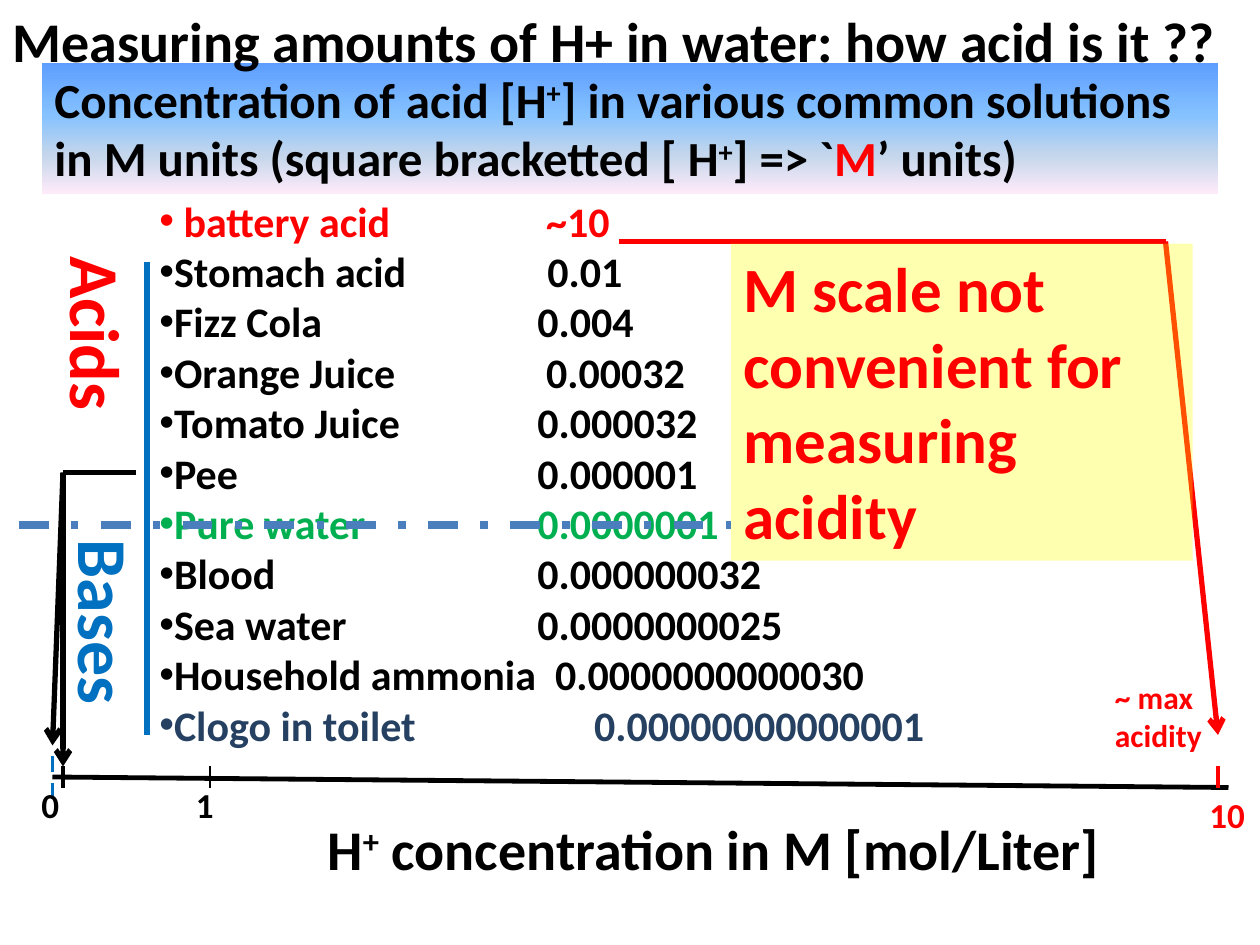
from lxml import etree
from pptx import Presentation
from pptx import util as u
from pptx.dml.color import RGBColor
from pptx.enum import dml, shapes, text
from pptx.oxml.ns import qn

COLS, ROWS = 120, 90
CELL = u.Inches(10) // COLS
C = {"black": "000000", "red": "FF0000", "blue": "0070C0", "green": "00B050",
     "navy": "254061", "steel": "4B7EBC", "yellow": "FFFF00"}
BAND = [(0, "5E9EFF"), (40, "85C2FF"), (70, "C4D6EB"), (100, "FFEBFA")]
SOLUTIONS = [
    (" battery acid", "~10", "red", 3.07),
    ("Stomach acid", "0.01", "black", 3.08),
    ("Fizz Cola", "0.004", "black", 3),
    ("Orange Juice", "0.00032", "black", 3.07),
    ("Tomato Juice", "0.000032", "black", 3),
    ("Pee", "0.000001", "black", 3),
    ("Pure water", "0.0000001", "green", 3),
    ("Blood", "0.000000032", "black", 3),
    ("Sea water", "0.0000000025", "black", 3),
    ("Household ammonia", "0.0000000000030", "black", 3.14),
    ("Clogo in toilet", "0.00000000000001", "navy", 3.45),
]


def rgb(name):
    return RGBColor.from_string(C[name])


def place(box, x, y):
    return int((box[0] + x) * CELL), int((box[1] + y) * CELL)


def sub(parent, tag, **attrs):
    return etree.SubElement(parent, qn(tag), attrs)


def line(s, box, start, end, color, width, dash=None, arrow=False):
    cx = s.shapes.add_connector(shapes.MSO_CONNECTOR.STRAIGHT,
                                *place(box, *start), *place(box, *end))
    cx.line.color.rgb = rgb(color)
    cx.line.width = u.Pt(width)
    if dash:
        cx.line.dash_style = dash
    if arrow:
        sub(cx.line._get_or_add_ln(), "a:tailEnd", type="arrow")
    sub(cx._element.spPr, "a:effectLst")


def style(p, size, color):
    p.font.name, p.font.size, p.font.bold = "Calibri", u.Pt(size), True
    p.font.color.rgb = rgb(color)


def add_tab(p, inches):
    tabs = sub(p._p.get_or_add_pPr(), "a:tabLst")
    sub(tabs, "a:tab", pos=str(u.Inches(inches)), algn="l")


def prepare(tf):
    tf.word_wrap = True
    tf.vertical_anchor = text.MSO_ANCHOR.TOP
    return tf


def write(tf, runs, size, color):
    p = prepare(tf).paragraphs[0]
    p.alignment = text.PP_ALIGN.LEFT
    style(p, size, color)
    for words in runs:
        r = p.add_run()
        r.text = words
        if words == "+":
            r.font._element.set("baseline", "30000")
        if words == "M":
            r.font.color.rgb = rgb("red")
    return p


def text_box(s, box, x, y, w, h):
    return s.shapes.add_textbox(*place(box, x, y), int(w * CELL), int(h * CELL)).text_frame


def panel(s, box, x, y, w, h):
    sp = s.shapes.add_shape(shapes.MSO_SHAPE.RECTANGLE, *place(box, x, y),
                            int(w * CELL), int(h * CELL))
    sp.shadow.inherit = False
    sp.line.fill.background()
    return sp


def header(s, box):
    sp = panel(s, box, 4, 6, 112, 12.5)
    sp.fill.gradient()
    grad = sp._element.spPr.find(qn("a:gradFill"))
    for child in list(grad):
        grad.remove(child)
    stops = sub(grad, "a:gsLst")
    for pos, color in BAND:
        sub(sub(stops, "a:gs", pos=str(pos * 1000)), "a:srgbClr", val=color)
    sub(grad, "a:lin", ang="5400000", scaled="0")
    write(sp.text_frame, ["Concentration of acid [H", "+",
                          "] in various common solutions in M units (square bracketted [ H",
                          "+", "] => `", "M", "’ units)"], 28, "black")
    write(text_box(s, box, 0, 0, 117, 7.7),
          ["Measuring amounts of H+ in water: how acid is it ??"], 32, "black")


def solution_list(s, box):
    tf = prepare(text_box(s, box, 14, 0, 106, 54.5))
    for i, (name, value, color, tab) in enumerate(SOLUTIONS):
        p = tf.paragraphs[0] if i == 0 else tf.add_paragraph()
        p.text = f"{name}\t{value}"
        style(p, 24, color)
        pPr = p._p.get_or_add_pPr()
        sub(pPr, "a:buFont", typeface="Arial")
        sub(pPr, "a:buChar", char="•")
        add_tab(p, tab)
    line(s, box, (14, 7), (14, 52), "blue", 3)


def axis(s, box):
    line(s, box, (5, 2), (117, 3), "black", 2.75)
    for x, color, width in [(6, "black", 2.5), (20, "black", 1.25), (116, "red", 2.5)]:
        line(s, box, (x, 1), (x, 3), color, width)
    line(s, box, (5, 0), (5, 5), "blue", 2.25, dml.MSO_LINE.DASH)
    add_tab(write(text_box(s, box, 2, 2, 28, 5.3), [" 0\t1"], 20, "black"), 1.29)
    write(text_box(s, box, 114, 3, 6, 5.3), ["10"], 20, "red")
    write(text_box(s, box, 105, -8, 14, 8.5), ["~ max acidity"], 18, "red")
    write(text_box(s, box, 30, 5, 82, 7.7),
          ["H", "+", " concentration in M [mol/Liter]"], 32, "black")


def pointers(s, box):
    line(s, box, (13, 22), (6, 22), "black", 2.5)
    line(s, box, (6, 22), (5, 48), "black", 3, arrow=True)
    line(s, box, (6, 22), (6, 50), "black", 3, arrow=True)
    line(s, box, (59, 0), (111, 0), "red", 2.75)
    line(s, box, (111, 0), (116, 47), "red", 3, arrow=True)


def callout(s, box):
    sp = panel(s, box, 0, 0, box[2], box[3])
    sp.fill.solid()
    sp.fill.fore_color.rgb = rgb("yellow")
    sub(sp._element.spPr.find(qn("a:solidFill"))[0], "a:alpha", val="31000")
    write(sp.text_frame, ["M scale not convenient for measuring acidity"], 36, "red")


def side_labels(s, box):
    line(s, box, (1.8, 27), (69.6, 27), "steel", 4.25, dml.MSO_LINE.DASH_DOT)
    for words, x, y, color in [("Acids", 3.5, 0.2, "red"), ("Bases", 4.2, 27.2, "blue")]:
        tf = text_box(s, box, x, y, 10.5, 18.1)
        write(tf, [words], 40, color)
        tf._txBody.bodyPr.set("vert", "eaVert")


def main():
    prs = Presentation()
    prs.slide_width, prs.slide_height = COLS * CELL, ROWS * CELL
    s = prs.slides.add_slide(prs.slide_layouts[6])
    header(s, (0, 0, COLS, 18.5))
    solution_list(s, (0, 18, COLS, 54))
    axis(s, (0, 72, COLS, 18))
    pointers(s, (0, 23, COLS, 50))
    callout(s, (69.6, 23.2, 44, 30.2))
    side_labels(s, (0, 23, COLS, 46))
    prs.save("out.pptx")


if __name__ == "__main__":
    main()
